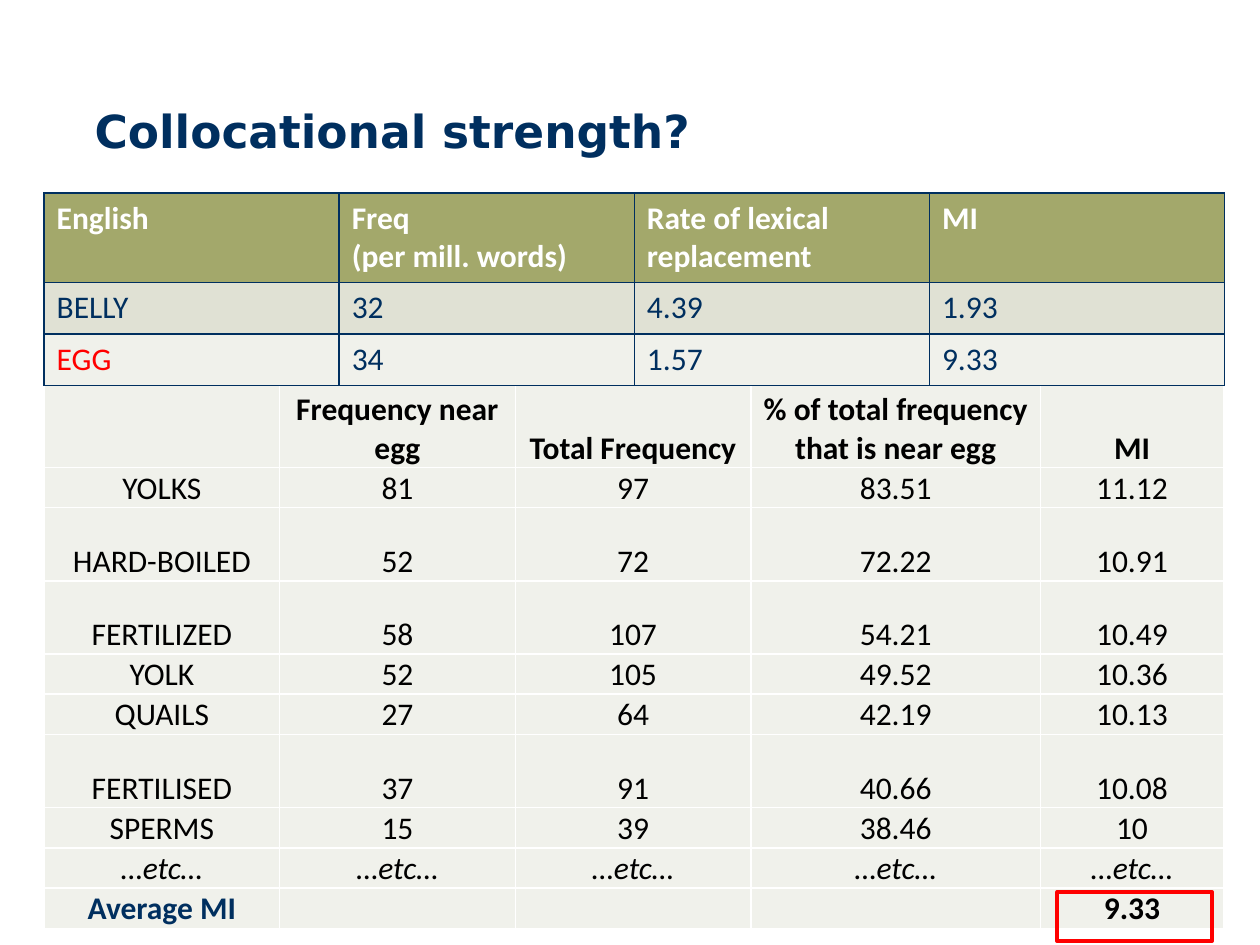
import pptx
import pptx.util
import pptx.dml.color
import pptx.enum.shapes
import pptx.enum.text
import pptx.oxml
import pptx.oxml.ns

Inches = pptx.util.Inches
Anchor = pptx.enum.text.MSO_ANCHOR
Align = pptx.enum.text.PP_ALIGN

theme = {
    "navy": "002F5F", "red": "FF0000", "white": "FFFFFF", "black": "000000",
    "olive": "A3A86B", "band": "E0E1D4", "pale": "F0F1EB",
    "head": "DejaVu Sans", "body": "Calibri", "big": 26, "text": 18,
}


def style(frame, color, bold=False, italic=False, face="body", size="text"):
    for para in frame.paragraphs:
        for item in [para, *para.runs]:
            font = item.font
            font.name = theme[face]
            font.size = pptx.util.Pt(theme[size])
            font.bold, font.italic = bold, italic
            font.color.rgb = pptx.dml.color.RGBColor.from_string(theme[color])


def paint(cell, fill, edge):
    props = cell._tc.get_or_add_tcPr()
    for side in ("lnL", "lnR", "lnT", "lnB"):
        props.append(pptx.oxml.parse_xml(
            f'<a:{side} {pptx.oxml.ns.nsdecls("a")} w="12700"><a:solidFill>'
            f'<a:srgbClr val="{theme[edge]}"/></a:solidFill></a:{side}>'))
    cell.fill.solid()
    cell.fill.fore_color.rgb = pptx.dml.color.RGBColor.from_string(theme[fill])


deck = pptx.Presentation()
deck.slide_width, deck.slide_height = Inches(10), Inches(7.5)
slide = deck.slides.add_slide(deck.slide_layouts[5])

# Title
title = slide.shapes.title
title.left, title.top = Inches(0.65), Inches(0.43)
title.width, title.height = Inches(8.69), Inches(0.87)
title.text_frame.text = "Collocational strength?"
title.text_frame.vertical_anchor = Anchor.BOTTOM
title.text_frame.paragraphs[0].alignment = Align.LEFT
style(title.text_frame, "navy", bold=True, face="head", size="big")

# Words found near egg
near = [
    ["", "Frequency near egg", "Total Frequency",
     "% of total frequency that is near egg", "MI"],
    ["YOLKS", "81", "97", "83.51", "11.12"],
    ["HARD-BOILED", "52", "72", "72.22", "10.91"],
    ["FERTILIZED", "58", "107", "54.21", "10.49"],
    ["YOLK", "52", "105", "49.52", "10.36"],
    ["QUAILS", "27", "64", "42.19", "10.13"],
    ["FERTILISED", "37", "91", "40.66", "10.08"],
    ["SPERMS", "15", "39", "38.46", "10"],
    ["…etc…"] * 5,
    ["Average MI", "", "", "", "9.33"],
]
wide = [1.87, 1.87, 1.87, 2.3, 1.45]
tall = {0: 0.9, 2: 0.58, 3: 0.58, 6: 0.58}
last = len(near) - 1
grid = slide.shapes.add_table(len(near), len(wide), Inches(0.35), Inches(2.81),
                              Inches(9.37), Inches(4.58)).table
grid.first_row = grid.horz_banding = False
for col, width in zip(grid.columns, wide):
    col.width = Inches(width)
for r, row in enumerate(near):
    grid.rows[r].height = Inches(tall.get(r, 0.32))
    for c, text in enumerate(row):
        cell = grid.cell(r, c)
        cell.margin_left = cell.margin_right = cell.margin_top = Inches(0.01)
        cell.margin_bottom = 0
        cell.vertical_anchor = Anchor.BOTTOM
        cell.text_frame.text = text
        cell.text_frame.paragraphs[0].alignment = Align.CENTER
        style(cell.text_frame, "navy" if (r, c) == (last, 0) else "black",
              bold=r in (0, last), italic=r == last - 1)
        paint(cell, "pale", "white")

# Frame around the average
box = slide.shapes.add_shape(pptx.enum.shapes.MSO_SHAPE.RECTANGLE, Inches(8.39),
                             Inches(7.08), Inches(1.23), Inches(0.39))
box.shadow.inherit = False
box.fill.background()
box.line.color.rgb = pptx.dml.color.RGBColor.from_string(theme["red"])
box.line.width = pptx.util.Pt(2)

# Belly against egg
words = [
    ["English", "Freq\v(per mill. words)", "Rate of lexical replacement", "MI"],
    ["BELLY", "32", "4.39", "1.93"],
    ["EGG", "34", "1.57", "9.33"],
]
fills = ["olive", "band", "pale"]
grid = slide.shapes.add_table(3, 4, Inches(0.35), Inches(1.53),
                              Inches(9.37), Inches(1.53)).table
grid.first_row = grid.horz_banding = False
for r, row in enumerate(words):
    grid.rows[r].height = Inches(0.41 if r else 0.71)
    for c, text in enumerate(row):
        cell = grid.cell(r, c)
        cell.text_frame.text = text
        ink = "white" if r == 0 else "red" if text == "EGG" else "navy"
        style(cell.text_frame, ink, bold=r == 0)
        paint(cell, fills[r], "navy")

deck.save("out.pptx")
